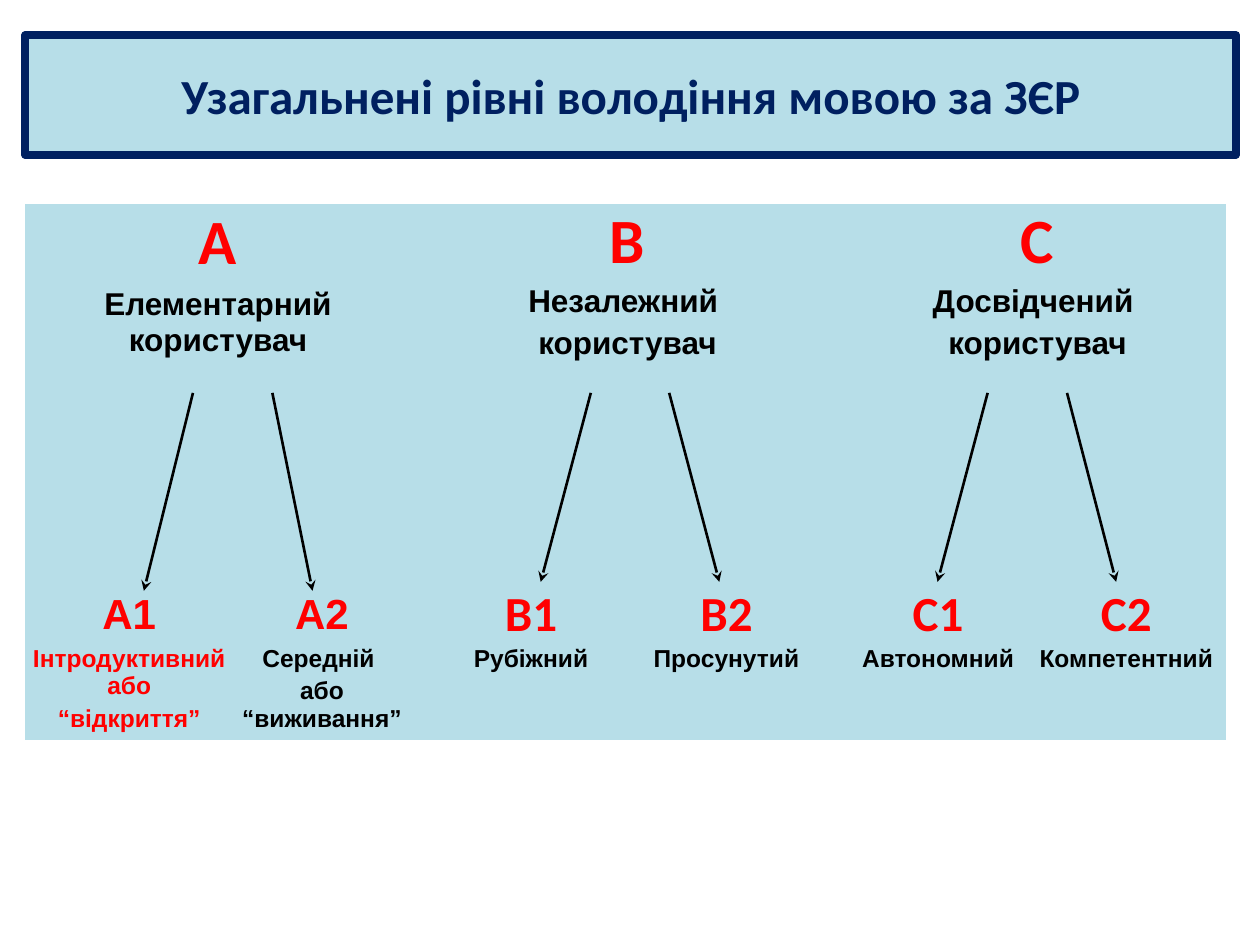
from dataclasses import dataclass

from lxml import etree
from pptx import Presentation
from pptx import util as u
from pptx.dml.color import RGBColor
from pptx.enum import shapes, text
from pptx.oxml import ns


@dataclass(frozen=True)
class Theme:
    fill: str = "B7DEE8"
    navy: str = "002060"
    red: str = "FF0000"
    black: str = "000000"
    plain: str = "Arial"
    head: str = "Calibri"
    title: int = 28
    band: int = 36
    user: int = 18
    level: int = 28
    small: int = 24
    note: int = 14


T = Theme()
TOP, MID, LOW = (text.MSO_ANCHOR.TOP, text.MSO_ANCHOR.MIDDLE,
                 text.MSO_ANCHOR.BOTTOM)
NO_STYLE = "{2D5ABB26-0587-4C30-8999-92F81FD0307C}"

COLS = (4.19, 3.58, 0.43, 3.99, 3.89, 0.53, 3.58, 4.01)
ROWS = (1.52, 1.68, 4.45, 1.19, 1.91)
LEFT, WIDTH = 0.51, 24.41

# First column of each band, letter, user lines
BANDS = (
    (0, "А", ["Елементарний користувач"]),
    (3, "В", ["Незалежний ", "користувач"]),
    (6, "С", ["Досвідчений ", "користувач"]),
)
# Column, level, note lines
LEVELS = (
    (0, "А1", ["Інтродуктивний або", "“відкриття”"]),
    (1, "А2", ["Середній ", "або “виживання”"]),
    (3, "В1", ["Рубіжний"]),
    (4, "В2", ["Просунутий"]),
    (6, "С1", ["Автономний"]),
    (7, "С2", ["Компетентний"]),
)
# Start x, end x, end y
START = 7.92
ARROWS = (
    (3.89, 2.9, 11.91), (5.49, 6.3, 11.91),
    (11.91, 10.9, 11.73), (13.49, 14.5, 11.73),
    (19.91, 18.9, 11.73), (21.51, 22.5, 11.73),
)


def paint(fill, color):
    fill.solid()
    fill.fore_color.rgb = RGBColor.from_string(color)


def write(frame, lines, size, font, color, gap=0.2):
    for i, line in enumerate(lines):
        para = frame.paragraphs[0] if i == 0 else frame.add_paragraph()
        para.alignment = text.PP_ALIGN.CENTER
        para.space_before = u.Pt(size * gap)
        run = para.add_run()
        run.text = line
        run.font.size = u.Pt(size)
        run.font.name = font
        run.font.bold = True
        run.font.color.rgb = RGBColor.from_string(color)


def add_title(slide, line):
    box = slide.shapes.add_shape(
        shapes.MSO_SHAPE.RECTANGLE,
        u.Cm(LEFT), u.Cm(0.71), u.Cm(WIDTH), u.Cm(2.41))
    box.shadow.inherit = False
    paint(box.fill, T.fill)
    paint(box.line.fill, T.navy)
    box.line.width = u.Pt(4.5)
    box.text_frame.word_wrap = True
    box.text_frame.vertical_anchor = MID
    write(box.text_frame, [line], T.title, T.head, T.navy, gap=0)


def add_grid(slide):
    grid = slide.shapes.add_table(
        len(ROWS), len(COLS), u.Cm(LEFT), u.Cm(4.11),
        u.Cm(sum(COLS)), u.Cm(sum(ROWS))).table
    grid.first_row = grid.horz_banding = False
    grid._tbl.tblPr.find(ns.qn("a:tableStyleId")).text = NO_STYLE
    for col, width in zip(grid.columns, COLS):
        col.width = u.Cm(width)
    for row, height in zip(grid.rows, ROWS):
        row.height = u.Cm(height)
    for cell in grid.iter_cells():
        paint(cell.fill, T.fill)
        cell.margin_left = cell.margin_right = 0
        cell.margin_top = cell.margin_bottom = 0
    return grid


def fill_cell(cell, anchor, *style):
    cell.vertical_anchor = anchor
    write(cell.text_frame, *style)


def fill_grid(grid):
    # Bands and their users, each over two columns
    for col, name, user in BANDS:
        for row in range(3):
            grid.cell(row, col).merge(grid.cell(row, col + 1))
        fill_cell(grid.cell(0, col), TOP if col else LOW,
                  [name], T.band, T.head, T.red)
        fill_cell(grid.cell(1, col), MID,
                  user, T.user, T.plain, T.black)
    # Levels and their notes
    for col, name, note in LEVELS:
        size, font = (T.small, T.plain) if col < 2 else (T.level, T.head)
        fill_cell(grid.cell(3, col), MID, [name], size, font, T.red)
        fill_cell(grid.cell(4, col), TOP, note, T.note, T.plain,
                  T.black if col else T.red)


def add_arrow(slide, x, end_x, end_y):
    line = slide.shapes.add_connector(
        shapes.MSO_CONNECTOR.STRAIGHT,
        u.Cm(x), u.Cm(START), u.Cm(end_x), u.Cm(end_y))
    paint(line.line.fill, T.black)
    line.line.width = u.Pt(1.5)
    etree.SubElement(line.line._get_or_add_ln(), ns.qn("a:tailEnd"),
                     type="stealth")
    etree.SubElement(line._element.spPr, ns.qn("a:effectLst"))


def main():
    deck = Presentation()
    deck.slide_width, deck.slide_height = u.Cm(25.4), u.Cm(19.05)
    slide = deck.slides.add_slide(deck.slide_layouts[6])

    add_title(slide, "Узагальнені рівні володіння мовою за ЗЄР")
    fill_grid(add_grid(slide))
    for arrow in ARROWS:
        add_arrow(slide, *arrow)

    deck.save("out.pptx")


if __name__ == "__main__":
    main()
